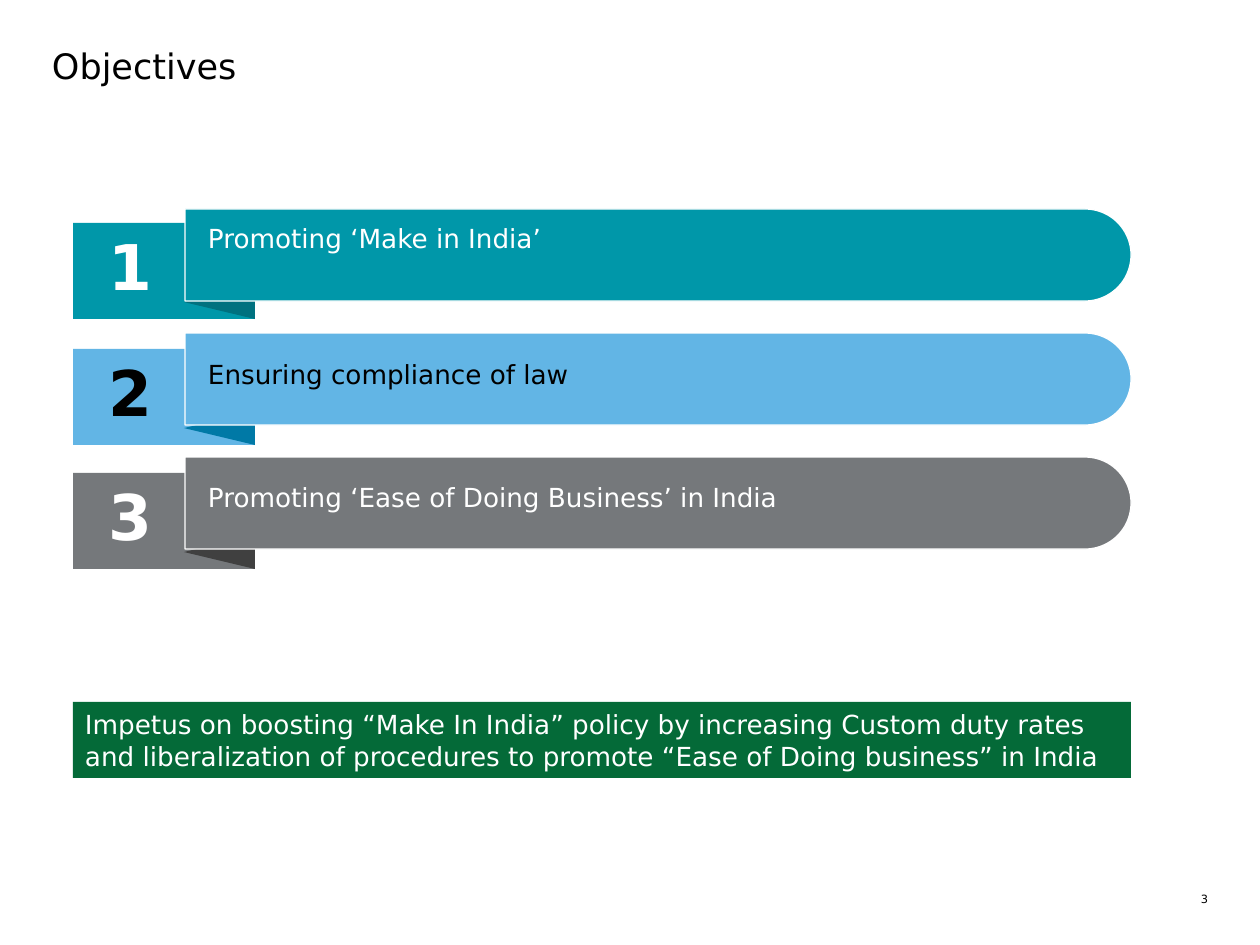
from pptx import Presentation
from pptx.dml.color import RGBColor
from pptx.enum.shapes import MSO_SHAPE
from pptx.enum.text import MSO_ANCHOR, PP_ALIGN
from pptx.util import Emu, Pt

RECT = MSO_SHAPE.RECTANGLE
FOLD = MSO_SHAPE.ISOSCELES_TRIANGLE
ROUND = MSO_SHAPE.ROUND_2_SAME_RECTANGLE
TOP, MID = MSO_ANCHOR.TOP, MSO_ANCHOR.MIDDLE
LEFT, MIDDLE, RIGHT = PP_ALIGN.LEFT, PP_ALIGN.CENTER, PP_ALIGN.RIGHT

WHITE = RGBColor(0xFF, 0xFF, 0xFF)
BLACK = RGBColor(0x00, 0x00, 0x00)
TEAL = RGBColor(0x00, 0x97, 0xA9)
DEEP = RGBColor(0x00, 0x71, 0x7F)
SKY = RGBColor(0x62, 0xB5, 0xE5)
BLUE = RGBColor(0x00, 0x79, 0xA6)
GREY = RGBColor(0x75, 0x78, 0x7B)
DARK = RGBColor(0x40, 0x40, 0x40)
GREEN = RGBColor(0x04, 0x6A, 0x38)
FONT = "DejaVu Sans"

ROWS = [
    ("1", "Promoting ‘Make in India’", TEAL, DEEP, WHITE, 209, 14, 13),
    ("2", "Ensuring compliance of law", SKY, BLUE, BLACK, 333, 16, 25),
    ("3", "Promoting ‘Ease of Doing Business’ in India", GREY, DARK, WHITE, 457, 16, 24),
]


def px(num):
    """Turn px into EMU."""
    return Emu(round(num * 914400 / 126))


def write(frame, text, size, color, align=LEFT, bold=False, inset=0, anchor=TOP):
    """Set one run of text in a frame."""
    frame.word_wrap = True
    frame.vertical_anchor = anchor
    frame.margin_left = frame.margin_right = px(inset)
    frame.margin_top = frame.margin_bottom = px(inset // 2)
    para = frame.paragraphs[0]
    para.alignment = align
    run = para.add_run()
    run.text = text
    font = run.font
    font.name, font.size, font.bold = FONT, Pt(size), bold
    font.color.rgb = color


def label(slide, box, *args, **kwargs):
    """Add a text box."""
    area = slide.shapes.add_textbox(*map(px, box))
    write(area.text_frame, *args, **kwargs)


def block(slide, kind, box, fill, turn=0):
    """Add a filled shape that covers the box after a quarter turn."""
    x, y, w, h = box
    if turn:
        x, y, w, h = x + (w - h) / 2, y + (h - w) / 2, h, w
    shape = slide.shapes.add_shape(kind, px(x), px(y), px(w), px(h))
    shape.rotation = turn
    shape.shadow.inherit = False
    shape.fill.solid()
    shape.fill.fore_color.rgb = fill
    shape.line.fill.background()
    return shape


def head(slide, box, text):
    """Fill the title placeholder."""
    title = slide.shapes.title
    title.left, title.top, title.width, title.height = map(px, box)
    write(title.text_frame, text, 20, BLACK)


def ribbon(slide, box, row):
    """Draw a numbered tab, its fold and the bar with its text."""
    num, text, fill, shade, ink, _, drop, pad = row
    x, y, w, h = box
    tab = y + drop
    block(slide, RECT, (x, tab, 181, 96), fill)
    block(slide, FOLD, (x + 111, tab + 62, 71, 34), shade, 270)
    bar = block(slide, ROUND, (x + 112, y, w - 112, h), fill, 90)
    bar.adjustments[0], bar.adjustments[1] = 0.5, 0
    bar.line.color.rgb = WHITE
    bar.line.width = Pt(0.75)
    label(slide, (x + 9, tab + 5, 96, 77), num, 36, ink, MIDDLE, True)
    label(slide, (x + 135, y + pad, 876, 31), text, 15, ink)


def note(slide, box, text):
    """Draw the closing band."""
    band = block(slide, RECT, box, GREEN)
    write(band.text_frame, text, 15, WHITE, inset=12, anchor=MID)


def main():
    """Build and save the slide."""
    deck = Presentation()
    deck.slide_width, deck.slide_height = px(1260), px(945)
    slide = deck.slides.add_slide(deck.slide_layouts[5])
    head(slide, (52, 44, 1157, 96), "Objectives")
    for row in ROWS:
        ribbon(slide, (73, row[5], 1058, 92), row)
    note(slide, (73, 702, 1058, 76),
         "Impetus on boosting “Make In India” policy by increasing Custom duty rates "
         "and liberalization of procedures to promote “Ease of Doing business” in India")
    label(slide, (1177, 892, 31, 14), "3", 6.5, BLACK, RIGHT)
    deck.save("out.pptx")


if __name__ == "__main__":
    main()
